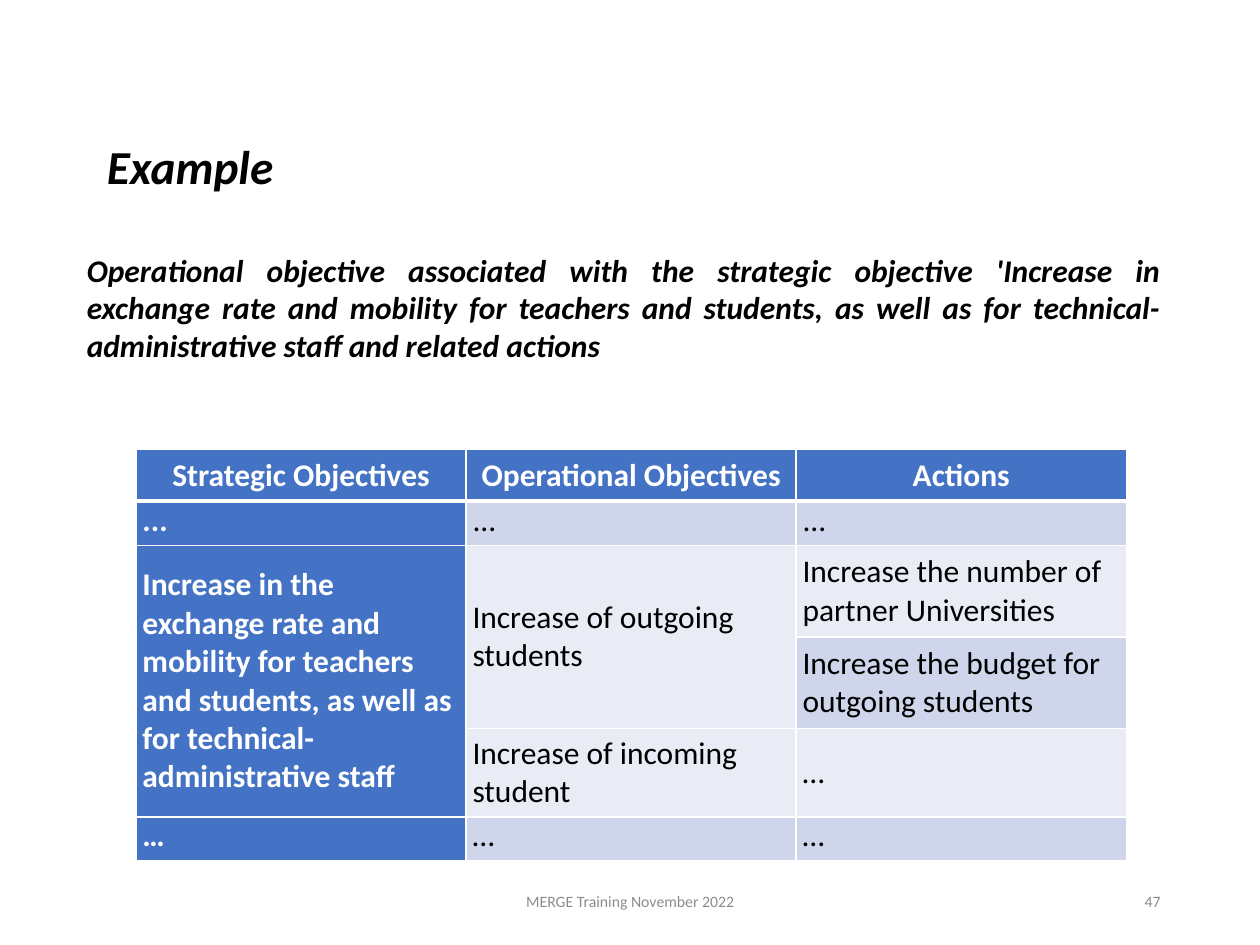
from lxml import etree
from pptx import Presentation
from pptx.dml.color import RGBColor
from pptx.enum.text import MSO_ANCHOR, PP_ALIGN
from pptx.oxml.ns import qn
from pptx.util import Pt

TOP, MIDDLE = MSO_ANCHOR.TOP, MSO_ANCHOR.MIDDLE
LEFT, CENTER, RIGHT, JUSTIFY = PP_ALIGN.LEFT, PP_ALIGN.CENTER, PP_ALIGN.RIGHT, PP_ALIGN.JUSTIFY

BLACK = RGBColor(0x00, 0x00, 0x00)
WHITE = RGBColor(0xFF, 0xFF, 0xFF)
GREY = RGBColor(0x8C, 0x8C, 0x8C)
BLUE = RGBColor(0x44, 0x72, 0xC4)
DARK_BAND = RGBColor(0xCF, 0xD5, 0xEA)
LIGHT_BAND = RGBColor(0xE9, 0xEB, 0xF5)

FONT = "Calibri"
ROW_HEIGHTS = [29.4, 25.2, 52.4, 52.4, 50.4, 25.2]
HEADER_ROW = 0
ELLIPSIS_ROWS = (1, 5)
OBJECTIVES = [
    ["Strategic Objectives", "Operational Objectives", "Actions"],
    ["...", "...", "..."],
    ["Increase in the exchange rate and mobility for teachers and students, "
     "as well as for technical-administrative staff",
     "Increase of outgoing students", "Increase the number of partner Universities"],
    [None, None, "Increase the budget for outgoing students"],
    [None, "Increase of incoming student", "…"],
    ["…", "…", "…"],
]
MERGES = [((2, 0), (4, 0)), ((2, 1), (3, 1))]


def write(paragraph, text, size, color, align=LEFT, bold=False, italic=False):
    paragraph.alignment = align
    run = paragraph.add_run()
    run.text = text
    font = run.font
    font.name, font.size = FONT, Pt(size)
    font.bold, font.italic = bold, italic
    font.color.rgb = color


def add_text(slide, box, text, size, color, align=LEFT, anchor=TOP, wrap=True, emphasis=False):
    frame = slide.shapes.add_textbox(*(Pt(length) for length in box)).text_frame
    frame.word_wrap = wrap
    frame.vertical_anchor = anchor
    write(frame.paragraphs[0], text, size, color, align, emphasis, emphasis)


def add_heading(slide, left, top, width):
    add_text(slide, (left + 11.5, top, 111, 40), "Example", 27, BLACK,
             wrap=False, emphasis=True)
    add_text(slide, (left, top + 64.8, width, 72.7),
             "Operational objective associated with the strategic objective 'Increase in "
             "exchange rate and mobility for teachers and students, as well as for "
             "technical-administrative staff and related actions",
             18, BLACK, JUSTIFY, emphasis=True)


def add_borders(cell, widths):
    properties = cell._tc.get_or_add_tcPr()
    for side, width in zip("LRTB", widths):
        line = etree.SubElement(properties, qn(f"a:ln{side}"), w=str(Pt(width)))
        fill = etree.SubElement(line, qn("a:solidFill"))
        etree.SubElement(fill, qn("a:srgbClr"), val=str(WHITE))


def add_objectives_table(slide, left, top, width):
    table = slide.shapes.add_table(
        len(OBJECTIVES), len(OBJECTIVES[0]),
        Pt(left), Pt(top), Pt(width), Pt(sum(ROW_HEIGHTS))).table
    table.first_row = table.horz_banding = False
    for column in table.columns:
        column.width = Pt(width / len(OBJECTIVES[0]))
    for row, height in zip(table.rows, ROW_HEIGHTS):
        row.height = Pt(height)
    for first, last in MERGES:
        table.cell(*first).merge(table.cell(*last))

    for r, labels in enumerate(OBJECTIVES):
        is_header = r == HEADER_ROW
        for c, label in enumerate(labels):
            cell = table.cell(r, c)
            is_heading = is_header or c == 0
            add_borders(cell, (1, 1, 3 if r == HEADER_ROW + 1 else 1, 3 if is_header else 1))
            cell.fill.solid()
            band = DARK_BAND if r % 2 else LIGHT_BAND
            cell.fill.fore_color.rgb = BLUE if is_heading else band
            cell.margin_left = cell.margin_right = Pt(3.6)
            cell.margin_top = cell.margin_bottom = Pt(0)
            cell.vertical_anchor = TOP if r in ELLIPSIS_ROWS else MIDDLE
            if label:
                align = CENTER if is_header else JUSTIFY if r in ELLIPSIS_ROWS else LEFT
                write(cell.text_frame.paragraphs[0], label, 18,
                      WHITE if is_heading else BLACK, align, is_heading)


def add_footer(slide, left, top, right, height):
    add_text(slide, (left, top, 243.4, height), "MERGE Training November 2022",
             9, GREY, CENTER, MIDDLE)
    add_text(slide, (right - 162, top, 162, height), "47", 9, GREY, RIGHT, MIDDLE)


def main():
    presentation = Presentation()
    presentation.slide_width, presentation.slide_height = Pt(720), Pt(540)
    slide = presentation.slides.add_slide(presentation.slide_layouts[6])
    add_heading(slide, 42.5, 74.9, 627.8)
    add_objectives_table(slide, 77.8, 257, 565.8)
    add_footer(slide, 238.3, 500.4, 670.3, 28.8)
    presentation.save("out.pptx")


if __name__ == "__main__":
    main()
